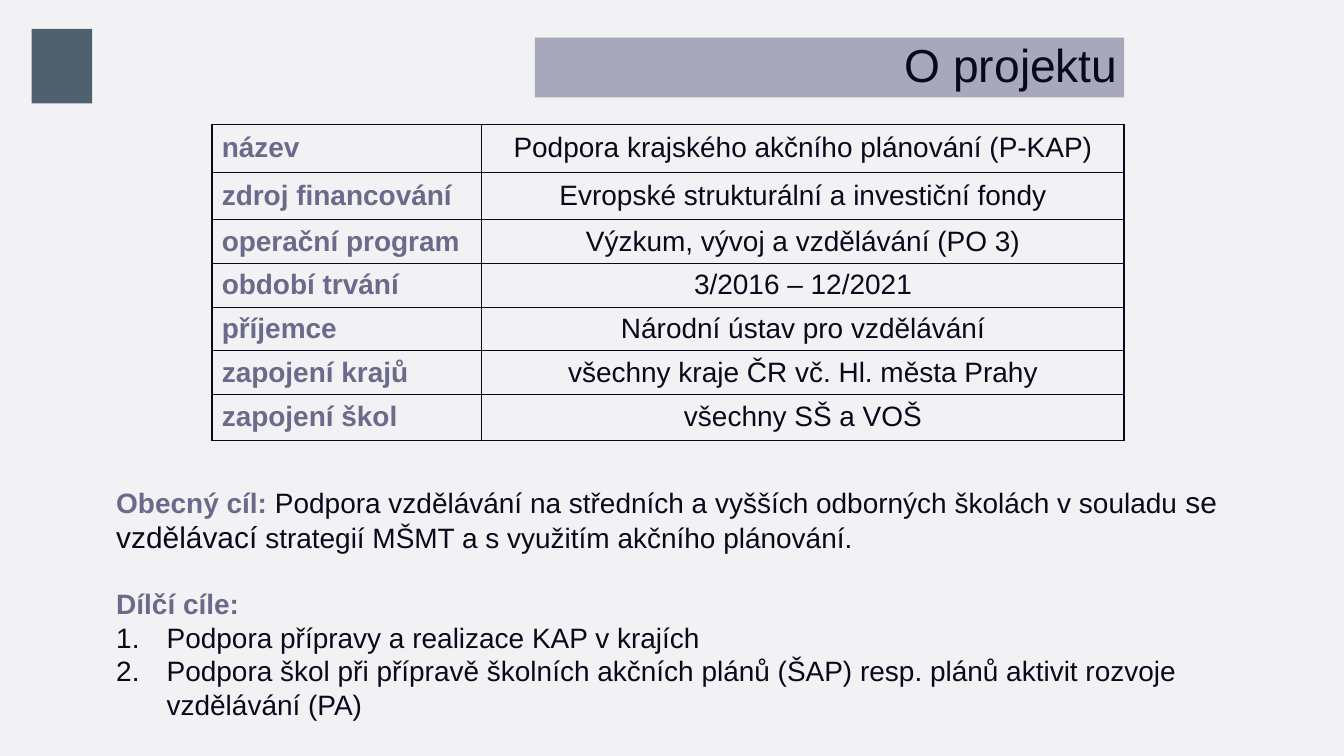
from dataclasses import dataclass

import pptx
import pptx.dml.color
import pptx.enum.shapes
import pptx.enum.text
import pptx.oxml
import pptx.oxml.ns
import pptx.util
from pptx.util import Inches


@dataclass(frozen=True)
class Theme:
    background: str = "F2F2F5"
    ink: str = "0A091B"
    accent: str = "6A6A8A"
    title_band: str = "A8A8BC"
    logo: str = "4F606E"
    font: str = "Arial"
    title_size: float = 49.5
    body_size: float = 30
    large_size: float = 32
    thin_line: float = 1
    thick_line: float = 2.25


THEME = Theme()

PROJECT_FACTS = [
    ("název", "Podpora krajského akčního plánování (P-KAP)"),
    ("zdroj financování", "Evropské strukturální a investiční fondy"),
    ("operační program", "Výzkum, vývoj a vzdělávání (PO 3)"),
    ("období trvání", "3/2016 – 12/2021"),
    ("příjemce", "Národní ústav pro vzdělávání"),
    ("zapojení krajů", "všechny kraje ČR vč. Hl. města Prahy"),
    ("zapojení škol", "všechny SŠ a VOŠ"),
]
COLUMN_WIDTHS = [4.02, 9.56]
ROW_HEIGHTS = [0.71, 0.71, 0.65, 0.65, 0.65, 0.65, 0.68]

PARTIAL_GOALS = [
    "Podpora přípravy a realizace KAP v krajích",
    "Podpora škol při přípravě školních akčních plánů (ŠAP) resp. plánů aktivit rozvoje vzdělávání (PA)",
]


def rgb(color):
    return pptx.dml.color.RGBColor.from_string(color)


def set_font(font, color=THEME.ink, size=THEME.body_size, bold=False):
    font.name = THEME.font
    font.size = pptx.util.Pt(size)
    font.bold = bold
    font.color.rgb = rgb(color)


def fill_solid(target, color):
    target.fill.solid()
    target.fill.fore_color.rgb = rgb(color)


def add_logo_block(slide):
    block = slide.shapes.add_shape(
        pptx.enum.shapes.MSO_SHAPE.RECTANGLE,
        Inches(0.47), Inches(0.43), Inches(0.9), Inches(1.11))
    block.shadow.inherit = False
    fill_solid(block, THEME.logo)
    block.line.fill.background()


def format_title(title):
    title.left, title.top = Inches(7.96), Inches(0.56)
    title.width, title.height = Inches(8.77), Inches(0.89)
    fill_solid(title, THEME.title_band)
    frame = title.text_frame
    frame.text = "O projektu"
    frame.auto_size = pptx.enum.text.MSO_AUTO_SIZE.NONE
    frame.vertical_anchor = pptx.enum.text.MSO_ANCHOR.MIDDLE
    paragraph = frame.paragraphs[0]
    paragraph.alignment = pptx.enum.text.PP_ALIGN.RIGHT
    paragraph.line_spacing = 0.9
    set_font(paragraph.font, size=THEME.title_size)


def set_cell_borders(cell, left, right):
    """Line the cell; left and right are widths in points."""
    properties = cell._tc.get_or_add_tcPr()
    widths = {"lnL": left, "lnR": right, "lnT": THEME.thin_line, "lnB": THEME.thin_line}
    for position, (tag, width) in enumerate(widths.items()):
        line = pptx.oxml.parse_xml(
            f'<a:{tag} {pptx.oxml.ns.nsdecls("a")} w="{pptx.util.Pt(width)}">'
            f'<a:solidFill><a:srgbClr val="{THEME.ink}"/></a:solidFill></a:{tag}>')
        properties.insert(position, line)


def format_cell(cell, text, is_label):
    cell.text = text
    cell.vertical_anchor = pptx.enum.text.MSO_ANCHOR.MIDDLE
    cell.margin_left = cell.margin_right = Inches(0.15)
    cell.margin_top = cell.margin_bottom = Inches(0.08)
    cell.fill.background()
    paragraph = cell.text_frame.paragraphs[0]
    if is_label:
        set_font(paragraph.font, THEME.accent, bold=True)
        set_cell_borders(cell, THEME.thick_line, THEME.thin_line)
    else:
        paragraph.alignment = pptx.enum.text.PP_ALIGN.CENTER
        set_font(paragraph.font)
        set_cell_borders(cell, THEME.thin_line, THEME.thick_line)


def add_facts_table(slide):
    table = slide.shapes.add_table(
        len(PROJECT_FACTS), len(COLUMN_WIDTHS), Inches(3.15), Inches(1.85),
        Inches(sum(COLUMN_WIDTHS)), Inches(sum(ROW_HEIGHTS))).table
    table.first_row = table.horz_banding = False
    for column, width in zip(table.columns, COLUMN_WIDTHS):
        column.width = Inches(width)
    for row, height, facts in zip(table.rows, ROW_HEIGHTS, PROJECT_FACTS):
        row.height = Inches(height)
        for index, text in enumerate(facts):
            format_cell(row.cells[index], text, is_label=index == 0)


def add_run(paragraph, text, **style):
    run = paragraph.add_run()
    run.text = text
    set_font(run.font, **style)


def number_paragraph(paragraph):
    properties = paragraph._p.get_or_add_pPr()
    properties.set("marL", str(Inches(0.75)))
    properties.set("indent", str(-Inches(0.75)))
    properties.append(pptx.oxml.parse_xml(
        f'<a:buFont {pptx.oxml.ns.nsdecls("a")} typeface="{THEME.font}"/>'))
    properties.append(pptx.oxml.parse_xml(
        f'<a:buAutoNum {pptx.oxml.ns.nsdecls("a")} type="arabicPeriod"/>'))


def add_goals(slide):
    frame = slide.shapes.add_textbox(
        Inches(1.58), Inches(7.12), Inches(17.67), Inches(3.66)).text_frame
    frame.word_wrap = True
    frame.margin_left = frame.margin_right = Inches(0.15)
    frame.margin_top = frame.margin_bottom = Inches(0.07)

    general = frame.paragraphs[0]
    add_run(general, "Obecný cíl: ", color=THEME.accent, bold=True)
    add_run(general, "Podpora vzdělávání na středních a vyšších odborných školách v souladu ")
    add_run(general, "se vzdělávací", size=THEME.large_size)
    add_run(general, " strategií MŠMT a s využitím akčního plánování.")

    heading = frame.add_paragraph()
    heading.text = "Dílčí cíle:"
    heading.space_before = pptx.util.Pt(34)
    set_font(heading.font, THEME.accent, bold=True)

    for goal in PARTIAL_GOALS:
        paragraph = frame.add_paragraph()
        paragraph.text = goal
        number_paragraph(paragraph)
        set_font(paragraph.font)


def main():
    presentation = pptx.Presentation()
    presentation.slide_width = Inches(20)
    presentation.slide_height = Inches(11.25)
    title_only = presentation.slide_layouts.get_by_name("Title Only")
    slide = presentation.slides.add_slide(title_only)
    fill_solid(slide.background, THEME.background)
    add_logo_block(slide)
    format_title(slide.shapes.title)
    add_facts_table(slide)
    add_goals(slide)
    presentation.save("out.pptx")


if __name__ == "__main__":
    main()
